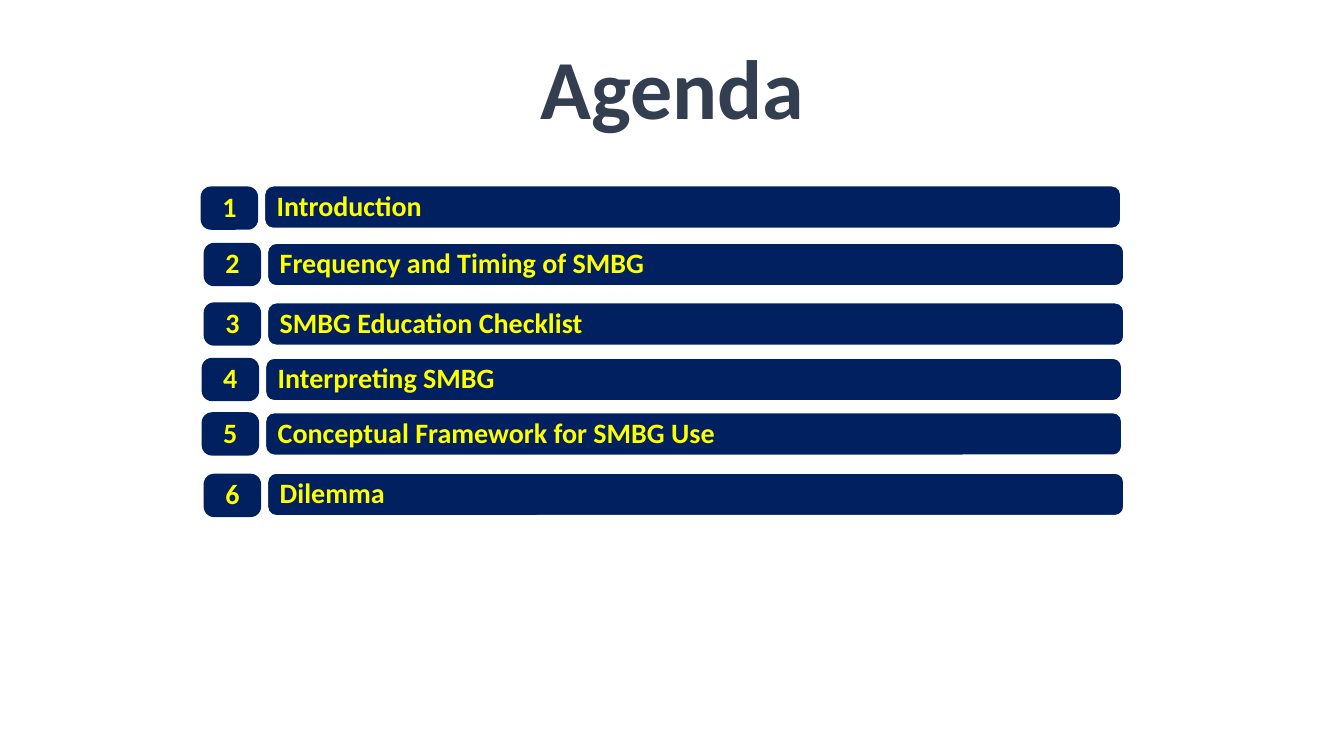
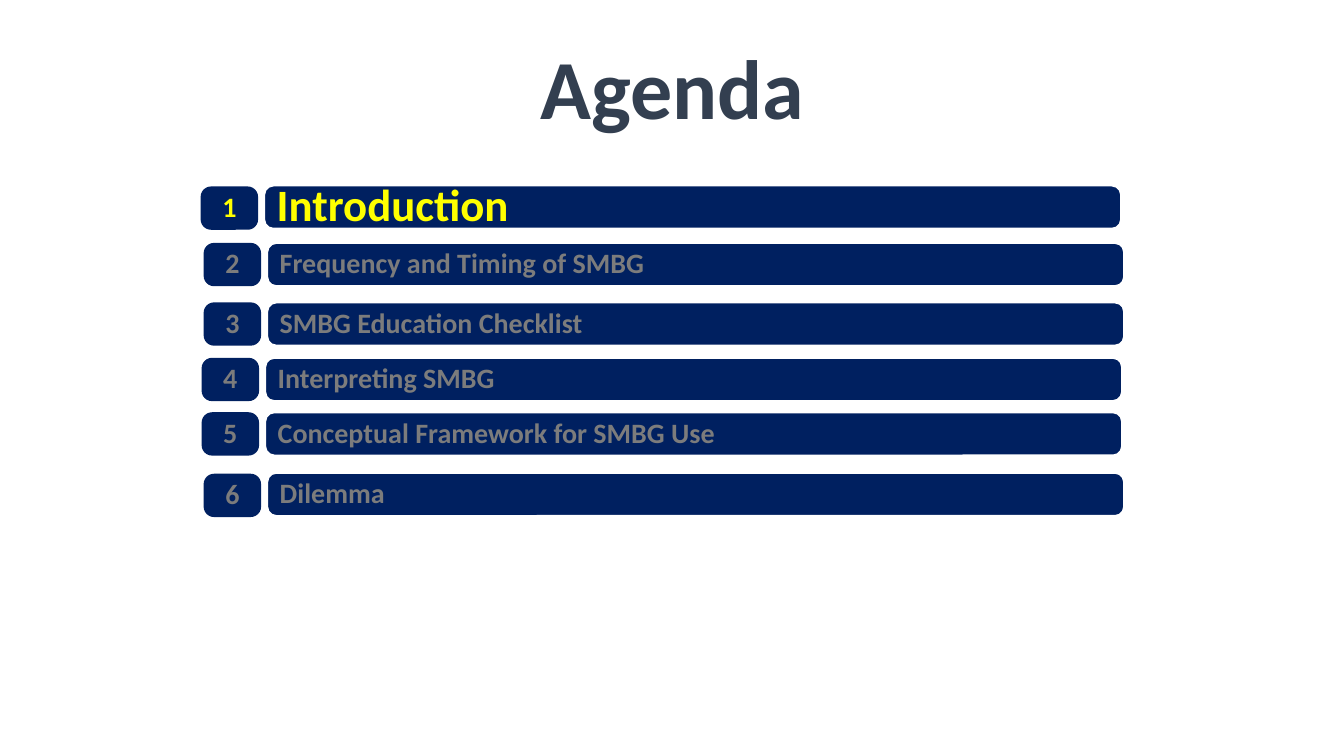
import dataclasses

import pptx
import pptx.dml.color
import pptx.enum.shapes
import pptx.enum.text
import pptx.util

Inches = pptx.util.Inches
Pt = pptx.util.Pt
ALIGN = pptx.enum.text.PP_ALIGN

FONT = "Calibri"
COLORS = {
    "title": "333F50",
    "bar": "002060",
    "outline": "FFFFFF",
    "active": "FFFF00",
    "muted": "7C7C7C",
}

# Row geometry in inches
ROW_HEIGHT = 0.43
BAR_WIDTH = 8.5
BADGE_WIDTH = 0.57
BADGE_OFFSET = 0.63
TEXT_SIZE = 20
HIGHLIGHT_SIZE = 32


@dataclasses.dataclass(frozen=True)
class Topic:
    label: str
    left: float
    top: float
    badge_drop: float = 0


TOPICS = [
    Topic("Introduction", 2.62, 1.84, 0.01),
    Topic("Frequency and Timing of SMBG", 2.65, 2.41),
    Topic("SMBG Education Checklist", 2.65, 3.0),
    Topic("Interpreting SMBG", 2.63, 3.55),
    Topic("Conceptual Framework for SMBG Use", 2.63, 4.09),
    Topic("Dilemma", 2.65, 4.69, 0.01),
]


def rgb(name: str) -> pptx.dml.color.RGBColor:
    return pptx.dml.color.RGBColor.from_string(COLORS[name])


def write(shape, text: str, size: int, color: str, align: ALIGN) -> None:
    """Put one bold paragraph into a shape."""
    shape.text_frame.word_wrap = True
    para = shape.text_frame.paragraphs[0]
    para.text = text
    para.alignment = align
    para.font.name = FONT
    para.font.size = Pt(size)
    para.font.bold = True
    para.font.color.rgb = rgb(color)


def add_pill(group, left: float, top: float, width: float, rounding: float,
             text: str, size: int, color: str, align: ALIGN):
    """Draw a rounded navy box with vertically centred text."""
    pill = group.shapes.add_shape(
        pptx.enum.shapes.MSO_SHAPE.ROUNDED_RECTANGLE,
        Inches(left), Inches(top), Inches(width), Inches(ROW_HEIGHT))
    pill.adjustments[0] = rounding
    pill.shadow.inherit = False
    pill.fill.solid()
    pill.fill.fore_color.rgb = rgb("bar")
    pill.line.fill.background()
    write(pill, text, size, color, align)
    pill.text_frame.vertical_anchor = pptx.enum.text.MSO_ANCHOR.MIDDLE
    pill.text_frame.paragraphs[0].line_spacing = 0.9
    return pill


def add_topic(page, number: int, topic: Topic, color: str, size: int) -> None:
    """Draw one agenda row: the topic bar and its number badge."""
    group = page.shapes.add_group_shape()
    bar = add_pill(group, topic.left, topic.top, BAR_WIDTH, 0.21,
                   topic.label, size, color, ALIGN.LEFT)
    bar.line.color.rgb = rgb("outline")
    bar.line.width = Pt(1.5)
    add_pill(group, topic.left - BADGE_OFFSET, topic.top + topic.badge_drop,
             BADGE_WIDTH, 0.24, str(number), TEXT_SIZE, color, ALIGN.CENTER)


def add_agenda(deck, current: int | None = None) -> None:
    """Add an agenda page, highlighting the current topic if there is one."""
    page = deck.slides.add_slide(deck.slide_layouts[6])
    title = page.shapes.add_textbox(
        Inches(0.67), Inches(0.3), Inches(12), Inches(1.25))
    write(title, "Agenda", 60, "title", ALIGN.CENTER)
    for number, topic in enumerate(TOPICS, start=1):
        color = "active" if current in (None, number) else "muted"
        size = HIGHLIGHT_SIZE if number == current else TEXT_SIZE
        add_topic(page, number, topic, color, size)


def main() -> None:
    deck = pptx.Presentation()
    deck.slide_width = Inches(13.33)
    deck.slide_height = Inches(7.5)
    add_agenda(deck)
    add_agenda(deck, current=1)
    deck.save("out.pptx")


if __name__ == "__main__":
    main()
